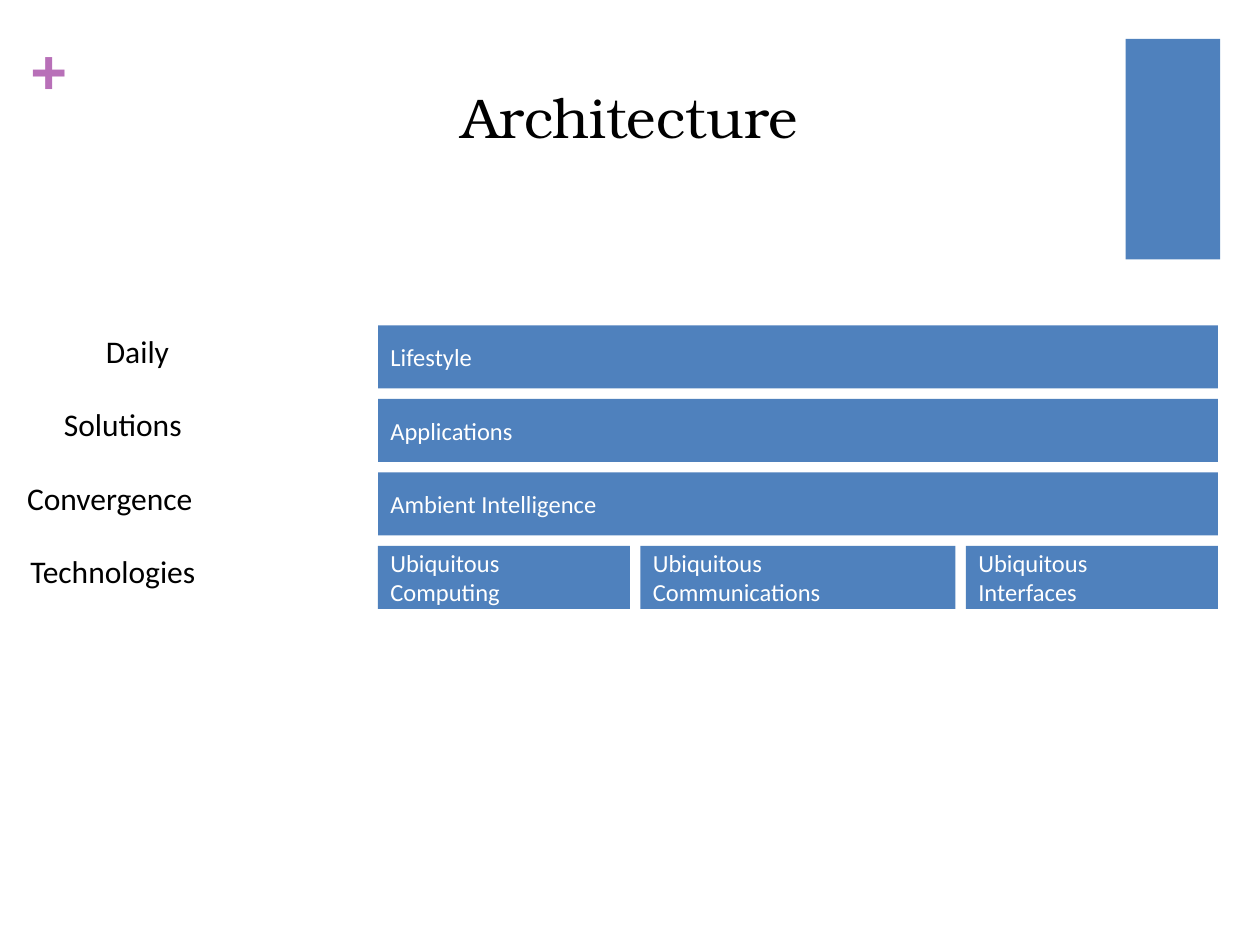
"""Build the layered architecture slide."""
from typing import NamedTuple

from pptx import Presentation
from pptx.dml.color import RGBColor
from pptx.enum.shapes import MSO_SHAPE
from pptx.enum.text import MSO_ANCHOR, MSO_AUTO_SIZE, PP_ALIGN
from pptx.shapes.autoshape import Shape
from pptx.slide import Slide
from pptx.util import Emu, Pt

EMU_PER_PX = 7620
BLUE = RGBColor(0x4F, 0x81, 0xBD)
PURPLE = RGBColor(0xB8, 0x70, 0xB8)
BLACK = RGBColor(0x00, 0x00, 0x00)
WHITE = RGBColor(0xFF, 0xFF, 0xFF)

BARS_LEFT, BARS_TOP = 360, 310
BAR_HEIGHT, GAP = 60, 10
LABEL_HEIGHT = 53


class Box(NamedTuple):
    left: int
    top: int
    width: int
    height: int


class Font(NamedTuple):
    name: str
    size: int
    color: RGBColor
    bold: bool = False


class Bar(NamedTuple):
    text: str
    width: int


class Layer(NamedTuple):
    label: str
    label_left: int
    label_width: int
    bars: tuple[Bar, ...]


TITLE_FONT = Font("TeX Gyre Bonum", 32, BLACK)
PLUS_FONT = Font("Arial", 36, PURPLE, True)
LABEL_FONT = Font("Calibri", 18, BLACK)
BAR_FONT = Font("Calibri", 14, WHITE)

LAYERS = (
    Layer("Daily", 89, 104, (Bar("Lifestyle", 800),)),
    Layer("Solutions", 49, 164, (Bar("Applications", 800),)),
    Layer("Convergence", 14, 233, (Bar("Ambient Intelligence", 800),)),
    Layer("Technologies", 17, 232, (
        Bar("Ubiquitous\nComputing", 240),
        Bar("Ubiquitous\nCommunications", 300),
        Bar("Ubiquitous\nInterfaces", 240),
    )),
)


def px(value: int) -> Emu:
    """Convert pixels to EMU."""
    return Emu(value * EMU_PER_PX)


def write(sp: Shape, text: str, font: Font, align: PP_ALIGN = PP_ALIGN.LEFT) -> None:
    """Put formatted text into a shape."""
    tf = sp.text_frame
    tf.text = text
    tf.word_wrap = False
    for p in tf.paragraphs:
        p.alignment = align
        for r in p.runs:
            r.font.name = font.name
            r.font.size = Pt(font.size)
            r.font.bold = font.bold
            r.font.color.rgb = font.color


def add_block(slide: Slide, box: Box) -> Shape:
    """Add a plain blue rectangle."""
    sp = slide.shapes.add_shape(MSO_SHAPE.RECTANGLE, *map(px, box))
    sp.shadow.inherit = False
    sp.fill.solid()
    sp.fill.fore_color.rgb = BLUE
    sp.line.fill.background()
    return sp


def add_label(slide: Slide, box: Box, text: str, font: Font) -> Shape:
    """Add a text box that fits its text."""
    sp = slide.shapes.add_textbox(*map(px, box))
    write(sp, text, font)
    sp.text_frame.auto_size = MSO_AUTO_SIZE.SHAPE_TO_FIT_TEXT
    return sp


def add_header(slide: Slide) -> None:
    """Add the corner block, the plus sign and the title."""
    add_block(slide, Box(1072, 37, 90, 210))
    tf = add_label(slide, Box(29, 30, 34, 73), "+", PLUS_FONT).text_frame
    tf.word_wrap = True
    tf.margin_left = tf.margin_top = tf.margin_right = tf.margin_bottom = 0
    title = slide.shapes.add_textbox(*map(px, Box(60, 36, 1080, 150)))
    write(title, "Architecture", TITLE_FONT, PP_ALIGN.CENTER)
    title.text_frame.word_wrap = True
    title.text_frame.vertical_anchor = MSO_ANCHOR.MIDDLE


def add_layer(slide: Slide, layer: Layer, top: int) -> None:
    """Add one label with its row of bars."""
    add_label(slide, Box(layer.label_left, top, layer.label_width, LABEL_HEIGHT),
              layer.label, LABEL_FONT)
    left = BARS_LEFT
    for bar in layer.bars:
        sp = add_block(slide, Box(left, top, bar.width, BAR_HEIGHT))
        write(sp, bar.text, BAR_FONT)
        sp.text_frame.vertical_anchor = MSO_ANCHOR.MIDDLE
        left += bar.width + GAP


def main() -> None:
    """Build and save the slide."""
    prs = Presentation()
    prs.slide_width, prs.slide_height = px(1200), px(900)
    slide = prs.slides.add_slide(prs.slide_layouts[6])
    add_header(slide)
    for i, layer in enumerate(LAYERS):
        add_layer(slide, layer, BARS_TOP + i * (BAR_HEIGHT + GAP))
    prs.save("out.pptx")


if __name__ == "__main__":
    main()
